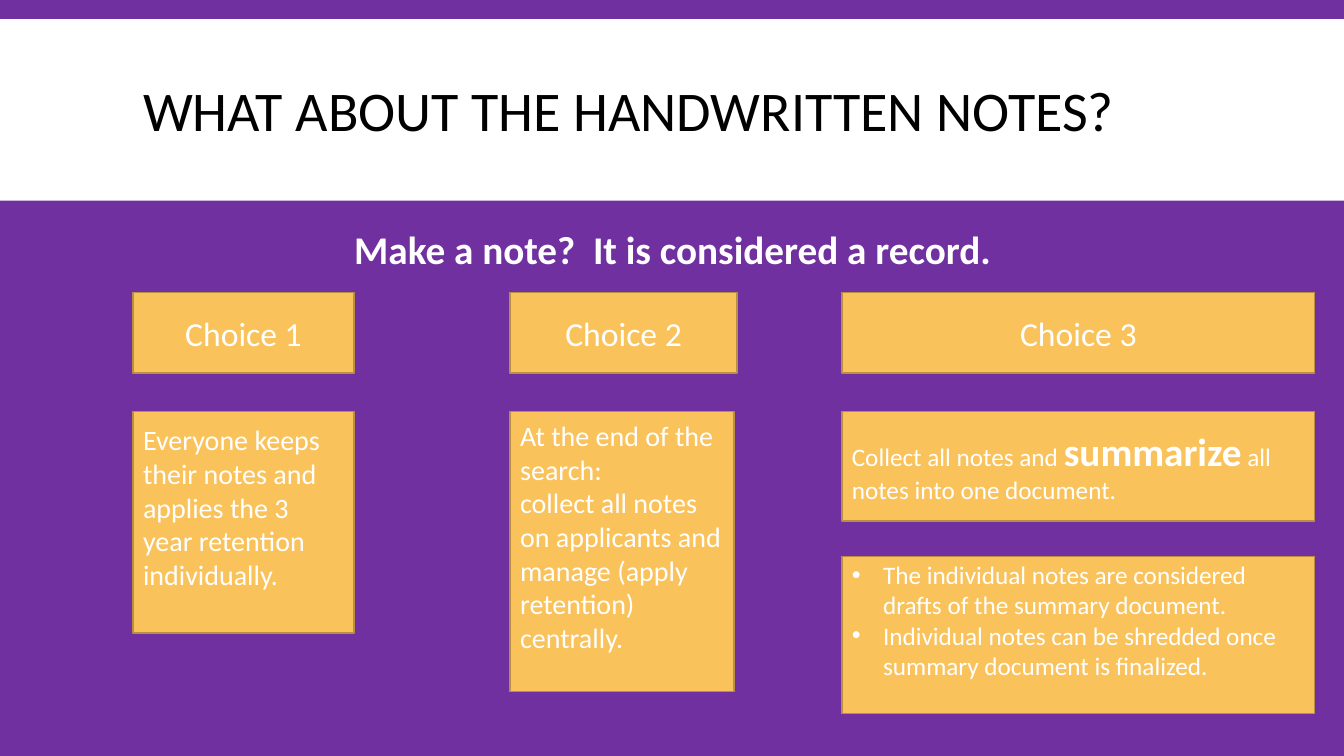
from lxml import etree
from pptx import Presentation
from pptx import util as u
from pptx.dml.color import RGBColor
from pptx.enum import shapes, text
from pptx.oxml.ns import qn

PX = 9144  # EMU per px, 100 px to the inch
FONT = "Calibri"
PURPLE, WHITE, BLACK = "7030A0", "FFFFFF", "000000"
GOLD, GOLD_EDGE = "FAC25A", "B99043"

SLIDE_SIZE = (1333, 750)
BAND = (0, 19, 1333, 180)
TITLE = ("WHAT ABOUT THE HANDWRITTEN NOTES?", (132, 31, 1070, 165))
SUBTITLE = ("Make a note?  It is considered a record.", (132, 209, 1070, 81))

# Each paragraph is a list of (words, size, bold).
HEAD_TOP, HEAD_HEIGHT = 290, 80
CHOICES = [("Choice 1", 132, 219), ("Choice 2", 506, 225), ("Choice 3", 835, 469)]

# left, top, width, height, room below the text, bulleted, paragraphs
DETAILS = [
    (132, 408, 219, 220, 30, False, [
        [("Everyone keeps their notes and applies the 3 year retention individually.", 20, False)],
    ]),
    (506, 408, 222, 278, 30, False, [
        [("At the end of the search:", 20, False)],
        [("collect all notes on applicants and manage (apply retention) centrally.", 20, False)],
    ]),
    (835, 408, 469, 109, 0, False, [
        [("Collect all notes and ", 18, False), ("summarize", 28, True),
         (" all notes into one document.", 18, False)],
    ]),
    (835, 552, 469, 156, 30, True, [
        [("The individual notes are considered drafts of the summary document.", 18, False)],
        [("Individual notes can be shredded once summary document is finalized.", 18, False)],
    ]),
]


def px(*lengths):
    return [u.Emu(length * PX) for length in lengths]


def color(value):
    return RGBColor.from_string(value)


def add_box(page, place, fill, edge=None):
    box = page.shapes.add_shape(shapes.MSO_SHAPE.RECTANGLE, *px(*place))
    box.shadow.inherit = False
    box.fill.solid()
    box.fill.fore_color.rgb = color(fill)
    if edge:
        box.line.color.rgb = color(edge)
        box.line.width = u.Pt(1)
    else:
        box.line.fill.background()
    return box


def write(box, paragraphs, align=text.PP_ALIGN.LEFT, ink=WHITE, spacing=None, room_below=0):
    frame = box.text_frame
    frame.word_wrap = True
    frame.auto_size = text.MSO_AUTO_SIZE.NONE
    frame.vertical_anchor = text.MSO_ANCHOR.MIDDLE
    frame.margin_left, frame.margin_right = px(10, 10)
    frame.margin_top, frame.margin_bottom = px(5, 5 + room_below)
    for index, spans in enumerate(paragraphs):
        para = frame.add_paragraph() if index else frame.paragraphs[0]
        para.alignment = align
        if spacing:
            para.line_spacing = spacing
        for words, size, bold in spans:
            span = para.add_run()
            span.text = words
            span.font.name = FONT
            span.font.size = u.Pt(size)
            span.font.bold = bold
            span.font.color.rgb = color(ink)


def add_bullets(box):
    hang = px(31)[0]
    for para in box.text_frame.paragraphs:
        properties = para._p.get_or_add_pPr()
        properties.set("marL", str(hang))
        properties.set("indent", str(-hang))
        etree.SubElement(properties, qn("a:buFont"), typeface="Arial")
        etree.SubElement(properties, qn("a:buChar"), char="•")


def main():
    deck = Presentation()
    deck.slide_width, deck.slide_height = px(*SLIDE_SIZE)
    page = deck.slides.add_slide(deck.slide_layouts.get_by_name("Title Only"))
    page.background.fill.solid()
    page.background.fill.fore_color.rgb = color(PURPLE)

    title = page.shapes.title
    band = add_box(page, BAND, WHITE)
    title.element.addprevious(band.element)  # keeps the band behind the title
    words, place = TITLE
    title.left, title.top, title.width, title.height = px(*place)
    write(title, [[(words, 40, False)]], ink=BLACK, spacing=0.85)

    words, place = SUBTITLE
    subtitle = page.shapes.add_textbox(*px(*place))
    write(subtitle, [[(words, 28, True)]], text.PP_ALIGN.CENTER, spacing=0.9)

    for words, left, width in CHOICES:
        box = add_box(page, (left, HEAD_TOP, width, HEAD_HEIGHT), GOLD, GOLD_EDGE)
        write(box, [[(words, 24, False)]], text.PP_ALIGN.CENTER)

    for *place, room_below, bulleted, paragraphs in DETAILS:
        box = add_box(page, place, GOLD, GOLD_EDGE)
        write(box, paragraphs, room_below=room_below)
        if bulleted:
            add_bullets(box)

    deck.save("out.pptx")


if __name__ == "__main__":
    main()
